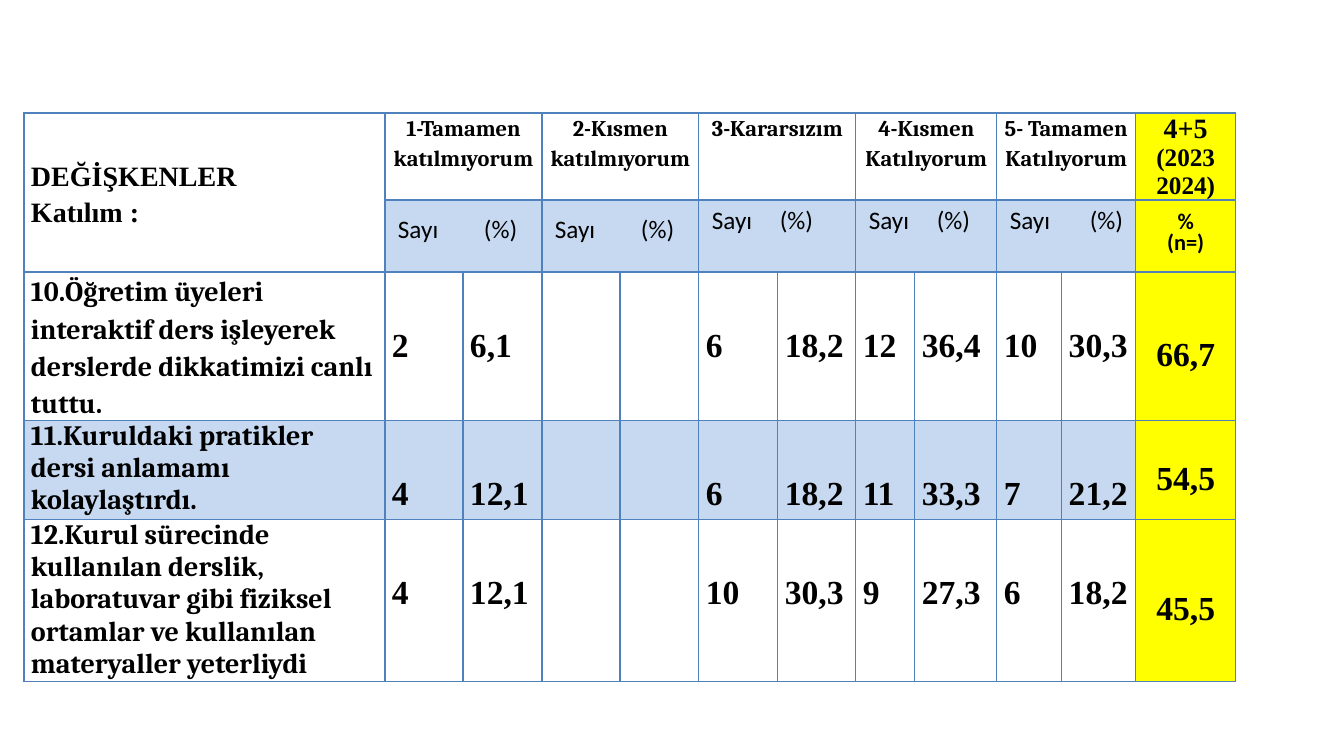
from dataclasses import dataclass
from lxml.etree import SubElement, fromstring
from pptx import Presentation
from pptx.dml.color import RGBColor
from pptx.enum.text import MSO_ANCHOR as Anchor, PP_ALIGN as Align
from pptx.oxml.ns import qn
from pptx.util import Pt


@dataclass(frozen=True)
class Theme:
    ink: str = "000000"
    rule: str = "4F81BD"
    band: str = "C6D9F1"
    highlight: str = "FFFF00"
    serif: str = "Times New Roman"
    heading: str = "Cambria"
    sans: str = "Calibri"
    small: int = 16
    medium: int = 18
    large: int = 20
    figure: int = 24
    thin: float = 1
    thick: float = 2.25


THEME = Theme()
EMU_PER_PX = 914400 / 100.8
SLIDE_SIZE = (1344, 756)
TABLE_ORIGIN = (24, 113)
COLUMN_WIDTHS = [361, 78, 79, 78, 79, 79, 78, 59, 82, 65, 74, 100]
ROW_HEIGHTS = [87, 72, 148, 99, 162]
SIDE_INSET = 7
COUNT_INSET = 13

VARIABLES_HEADING = ["DEĞİŞKENLER", "Katılım :"]
ANSWERS = [
    ("1-Tamamen katılmıyorum", 86, 0),
    ("2-Kısmen katılmıyorum", 86, 0),
    ("3-Kararsızım", 68, 18),
    ("4-Kısmen Katılıyorum", 68, 18),
    ("5- Tamamen Katılıyorum", 80, 18),
]
COUNT_HEADING = "Sayı\t(%)"
TOTAL_HEADING = [("4+5", THEME.large), ("(2023 2024)", THEME.medium)]
TOTAL_UNITS = ["%", "(n=)"]
QUESTIONS = [
    ("10.Öğretim üyeleri interaktif ders işleyerek derslerde dikkatimizi canlı tuttu.",
     1.15, None,
     ["2", "6,1", "", "", "6", "18,2", "12", "36,4", "10", "30,3"], "66,7"),
    ("11.Kuruldaki pratikler dersi anlamamı kolaylaştırdı.",
     1.0, THEME.band,
     ["4", "12,1", "", "", "6", "18,2", "11", "33,3", "7", "21,2"], "54,5"),
    ("12.Kurul sürecinde kullanılan derslik, laboratuvar gibi fiziksel ortamlar ve kullanılan materyaller yeterliydi",
     1.0, None,
     ["4", "12,1", "", "", "10", "30,3", "9", "27,3", "6", "18,2"], "45,5"),
]


def px(length):
    return round(length * EMU_PER_PX)


def write(cell, lines, size=THEME.large, font=THEME.serif, bold=True,
          align=Align.LEFT, spacing=1.0, anchor=Anchor.TOP, tab=None):
    cell.vertical_anchor = anchor
    for index, line in enumerate(lines):
        text, line_size = line if isinstance(line, tuple) else (line, size)
        frame = cell.text_frame
        paragraph = frame.add_paragraph() if index else frame.paragraphs[0]
        paragraph.alignment = align
        paragraph.line_spacing = spacing
        if tab:
            stops = SubElement(paragraph._p.get_or_add_pPr(), qn("a:tabLst"))
            SubElement(stops, qn("a:tab"), pos=str(px(tab)), algn="l")
        run = paragraph.add_run()
        run.text = text
        run.font.size = Pt(line_size)
        run.font.name = font
        run.font.bold = bold
        run.font.color.rgb = RGBColor.from_string(THEME.ink)


def paint(cell, color):
    if color:
        cell.fill.solid()
        cell.fill.fore_color.rgb = RGBColor.from_string(color)
    else:
        cell.fill.background()


def outline(cell, **widths):
    properties = cell._tc.get_or_add_tcPr()
    for index, side in enumerate("LRTB"):
        width = Pt(widths.get(side, THEME.thin))
        properties.insert(index, fromstring(
            f'<a:ln{side} xmlns:a="http://schemas.openxmlformats.org/drawingml/2006/main" w="{width}">'
            f'<a:solidFill><a:srgbClr val="{THEME.rule}"/></a:solidFill></a:ln{side}>'))


def prepare_grid(table):
    for column, width in zip(table.columns, COLUMN_WIDTHS):
        column.width = px(width)
    for row, height in zip(table.rows, ROW_HEIGHTS):
        row.height = px(height)
    for r, row in enumerate(table.rows):
        for c, cell in enumerate(row.cells):
            cell.margin_left = cell.margin_right = px(SIDE_INSET)
            cell.margin_top = cell.margin_bottom = 0
            paint(cell, None)
            edges = {0: {"B": THEME.thick}, 1: {"T": THEME.thick}}.get(r, {}) if c else {}
            outline(cell, **edges)


def fill_headings(table):
    variables = table.cell(0, 0)
    variables.merge(table.cell(1, 0))
    write(variables, VARIABLES_HEADING, spacing=1.15, anchor=Anchor.MIDDLE)
    for index, (answer, tab, lift) in enumerate(ANSWERS):
        first = 1 + 2 * index
        heading, counts = table.cell(0, first), table.cell(1, first)
        heading.merge(table.cell(0, first + 1))
        counts.merge(table.cell(1, first + 1))
        write(heading, [answer], size=THEME.small, font=THEME.heading,
              align=Align.CENTER, spacing=1.15)
        counts.margin_left = px(COUNT_INSET)
        counts.margin_bottom = px(lift)
        paint(counts, THEME.band)
        write(counts, [COUNT_HEADING], size=THEME.medium, font=THEME.sans,
              bold=False, spacing=Pt(13), anchor=Anchor.MIDDLE, tab=tab)
    last = len(COLUMN_WIDTHS) - 1
    total, units = table.cell(0, last), table.cell(1, last)
    paint(total, THEME.highlight)
    paint(units, THEME.highlight)
    write(total, TOTAL_HEADING, align=Align.CENTER)
    write(units, TOTAL_UNITS, size=THEME.small, font=THEME.sans,
          align=Align.CENTER, spacing=Pt(15), anchor=Anchor.MIDDLE)


def fill_questions(table):
    for r, (question, spacing, band, figures, total) in enumerate(QUESTIONS, 2):
        question_cell, *figure_cells, total_cell = table.rows[r].cells
        paint(question_cell, band)
        write(question_cell, [question], font=THEME.heading, spacing=spacing)
        for cell, figure in zip(figure_cells, figures):
            paint(cell, band)
            if figure:
                write(cell, [figure], size=THEME.figure, spacing=2.5)
        paint(total_cell, THEME.highlight)
        write(total_cell, [total], size=THEME.figure, align=Align.CENTER,
              spacing=1.5, anchor=Anchor.MIDDLE)


def main():
    deck = Presentation()
    deck.slide_width, deck.slide_height = map(px, SLIDE_SIZE)
    slide = deck.slides.add_slide(deck.slide_layouts[6])
    survey = slide.shapes.add_table(
        len(ROW_HEIGHTS), len(COLUMN_WIDTHS), *map(px, TABLE_ORIGIN),
        px(sum(COLUMN_WIDTHS)), px(sum(ROW_HEIGHTS))).table
    survey.first_row = survey.horz_banding = False
    prepare_grid(survey)
    fill_headings(survey)
    fill_questions(survey)
    deck.save("out.pptx")


if __name__ == "__main__":
    main()
